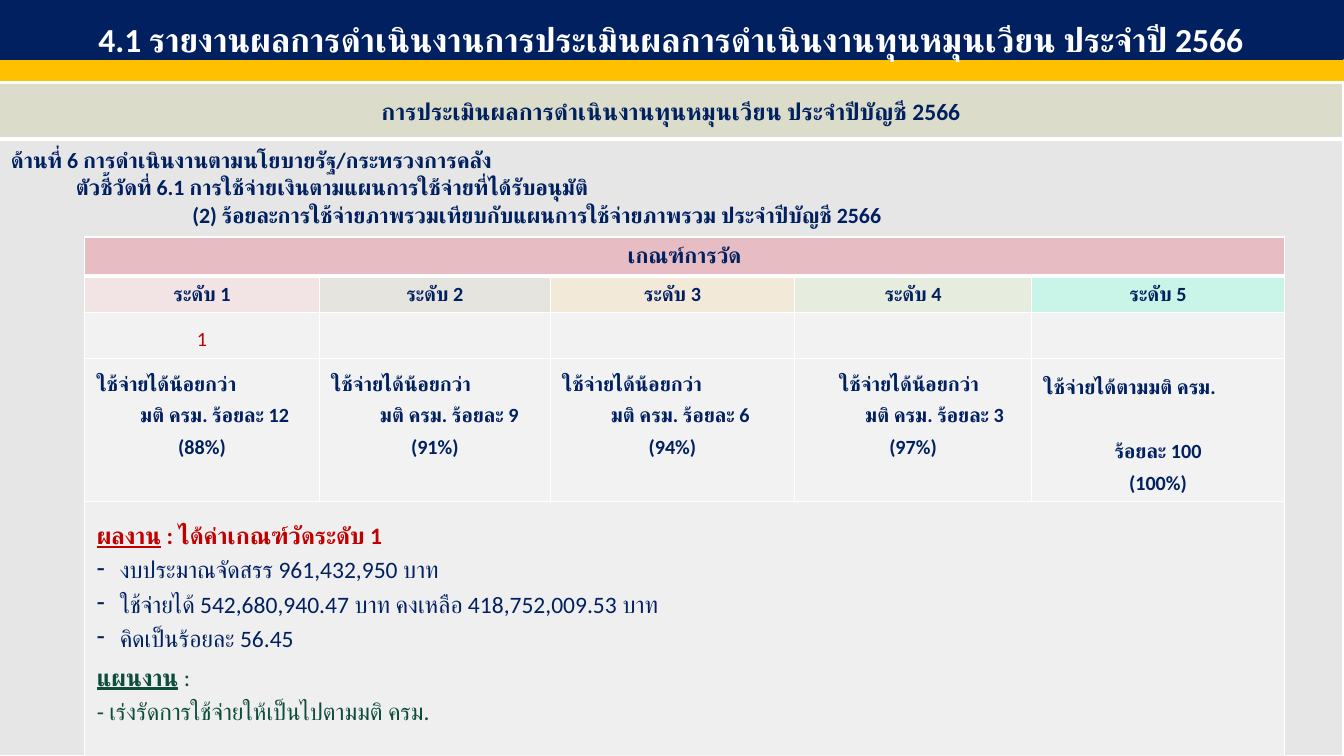
import pptx
import pptx.dml.color
import pptx.enum.shapes
import pptx.enum.text
import pptx.oxml.ns
import pptx.util
from lxml import etree

Pt = pptx.util.Pt
qn = pptx.oxml.ns.qn
ALIGN = pptx.enum.text.PP_ALIGN
ANCHOR = pptx.enum.text.MSO_ANCHOR
NAVY, GOLD, WHITE = "002060", "FFC000", "FFFFFF"
RED, GREEN, PALE = "C00000", "0E4D3C", "F2F2F2"


def rgb(code):
    return pptx.dml.color.RGBColor.from_string(code)


class Deck:
    font = "Calibri"

    def __init__(self, wide, high):
        self.prs = pptx.Presentation()
        self.prs.slide_width, self.prs.slide_height = Pt(wide), Pt(high)
        self.slide = self.prs.slides.add_slide(self.prs.slide_layouts[5])

    def paint(self, shape, fill):
        shape.fill.solid()
        shape.fill.fore_color.rgb = rgb(fill)
        shape.line.color.rgb = rgb(fill)
        shape.line.width = Pt(1)

    def bar(self, x, y, w, h, fill):
        kind = pptx.enum.shapes.MSO_SHAPE.RECTANGLE
        shape = self.slide.shapes.add_shape(kind, Pt(x), Pt(y), Pt(w), Pt(h))
        shape.shadow.inherit = False
        self.paint(shape, fill)

    def title(self, x, y, w, h, text, fill):
        """Format the title placeholder as a band and bring it to the front."""
        shape = self.slide.shapes.title
        shape.left, shape.top, shape.width, shape.height = Pt(x), Pt(y), Pt(w), Pt(h)
        self.paint(shape, fill)
        frame = shape.text_frame
        frame.word_wrap = True
        frame.auto_size = pptx.enum.text.MSO_AUTO_SIZE.NONE
        frame.vertical_anchor = ANCHOR.MIDDLE
        self.para(frame, [text], 20, WHITE, center=True, space=1.5)
        shape._element.getparent().append(shape._element)

    def table(self, x, y, cols, rows):
        frame = self.slide.shapes.add_table(
            len(rows), len(cols), Pt(x), Pt(y), Pt(sum(cols)), Pt(sum(rows)))
        table = frame.table
        table.first_row = table.horz_banding = False
        for col, width in zip(table.columns, cols):
            col.width = Pt(width)
        for row, height in zip(table.rows, rows):
            row.height = Pt(height)
        for r in range(len(rows)):
            for c in range(len(cols)):
                self.border(table.cell(r, c), r)
        return table

    def border(self, cell, row):
        """White cell lines, thick below the heading row."""
        props = cell._tc.get_or_add_tcPr()
        for side in "LRTB":
            thick = (row, side) in ((0, "B"), (1, "T"))
            line = etree.SubElement(props, qn("a:ln" + side), w=str(Pt(3 if thick else 1)))
            fill = etree.SubElement(line, qn("a:solidFill"))
            etree.SubElement(fill, qn("a:srgbClr"), val=WHITE)

    def cell(self, table, row, col, fill, alpha=100, middle=False, pad=3.6):
        """Fill a cell and return its text frame."""
        cell = table.cell(row, col)
        cell.fill.solid()
        cell.fill.fore_color.rgb = rgb(fill)
        if alpha < 100:
            tone = cell._tc.tcPr.find(qn("a:solidFill"))[0]
            etree.SubElement(tone, qn("a:alpha"), val=str(alpha * 1000))
        cell.vertical_anchor = ANCHOR.MIDDLE if middle else ANCHOR.TOP
        cell.margin_top = Pt(pad)
        return cell.text_frame

    def para(self, frame, runs, size, color=NAVY, bold=True, center=False,
             space=1, indent=0, before=0, after=0, dash=False):
        """Add a paragraph; a run is text or (text, bold, underline)."""
        para = frame.paragraphs[0]
        if para.runs:
            para = frame.add_paragraph()
        para.alignment = ALIGN.CENTER if center else ALIGN.LEFT
        para.line_spacing = space
        para.space_before, para.space_after = Pt(before), Pt(after)
        props = para._p.get_or_add_pPr()
        props.set("marL", str(Pt(indent)))
        props.set("indent", str(Pt(-indent if dash else 0)))
        if dash:
            etree.SubElement(props, qn("a:buChar"), char="-")
        for item in runs:
            text, heavy, under = (item, bold, False) if isinstance(item, str) else item
            run = para.add_run()
            run.text = text
            run.font.name, run.font.size = self.font, Pt(size)
            run.font.bold, run.font.underline = heavy, under
            run.font.color.rgb = rgb(color)
            etree.SubElement(run._r.rPr, qn("a:cs"), typeface=self.font)


def main():
    deck = Deck(800, 450)
    deck.bar(0, 36, 800, 11.5, GOLD)

    panel = deck.table(-0.7, 49.7, [800], [33.1, 367])
    head = deck.cell(panel, 0, 0, "DBDCC9", middle=True, pad=5)
    deck.para(head, ["การประเมินผลการดำเนินงานทุนหมุนเวียน ประจำปีบัญชี 2566"], 14, center=True)
    body = deck.cell(panel, 1, 0, "E7E6E6", pad=5)
    for indent, text in (
            (0, "ด้านที่ 6 การดำเนินงานตามนโยบายรัฐ/กระทรวงการคลัง"),
            (38.7, "ตัวชี้วัดที่ 6.1 การใช้จ่ายเงินตามแผนการใช้จ่ายที่ได้รับอนุมัติ"),
            (108, "(2) ร้อยละการใช้จ่ายภาพรวมเทียบกับแผนการใช้จ่ายภาพรวม ประจำปีบัญชี 2566")):
        deck.para(body, [text], 13, indent=indent, after=0.5)

    deck.title(-0.7, -1.4, 800, 36.7,
               "4.1 รายงานผลการดำเนินงานการประเมินผลการดำเนินงานทุนหมุนเวียน ประจำปี 2566", NAVY)

    grid = deck.table(50.4, 141.1, [139.7, 137.5, 145.4, 141.1, 150.5],
                      [22.3, 21.6, 27.4, 83, 154.6])
    for row in (0, 4):
        grid.cell(row, 0).merge(grid.cell(row, 4))
    head = deck.cell(grid, 0, 0, "E8ABB5", 70, middle=True)
    deck.para(head, ["เกณฑ์การวัด"], 13, center=True)

    tints = (("FAE4E5", 60), ("E6E4DF", 100), ("FCEBD1", 60), ("E8F3DA", 60), ("C8F5E8", 100))
    for col, (fill, alpha) in enumerate(tints):
        level = deck.cell(grid, 1, col, fill, alpha, middle=True)
        deck.para(level, [f"ระดับ {col + 1}"], 12, center=True)
        score = deck.cell(grid, 2, col, PALE, middle=True)
        deck.para(score, ["" if col else "1"], 12, RED, bold=False, center=True, space=1.3)

    goals = ((12, 88, 0, 26), (9, 91, 0, 29), (6, 94, 0, 29), (3, 97, 19.5, 35))
    for col, (short, rate, first, second) in enumerate(goals):
        goal = deck.cell(grid, 3, col, PALE)
        deck.para(goal, ["ใช้จ่ายได้น้อยกว่า"], 12, space=1.3, indent=first)
        deck.para(goal, [f"มติ ครม. ร้อยละ {short}"], 12, space=1.3, indent=second)
        deck.para(goal, [f"({rate}%)"], 12, space=1.3, center=True)
    goal = deck.cell(grid, 3, 4, PALE, pad=5.6)
    deck.para(goal, ["ใช้จ่ายได้ตามมติ ครม."], 12, space=1.3, after=19)
    for text in ("ร้อยละ 100", "(100%)"):
        deck.para(goal, [text], 12, space=1.3, center=True)

    result = deck.cell(grid, 4, 0, PALE, 80)
    deck.para(result, [("ผลงาน", True, True), " : ได้ค่าเกณฑ์วัดระดับ 1"], 14, RED, space=1.5)
    for text in ("งบประมาณจัดสรร 961,432,950 บาท",
                 "ใช้จ่ายได้ 542,680,940.47 บาท คงเหลือ 418,752,009.53 บาท",
                 "คิดเป็นร้อยละ 56.45"):
        deck.para(result, [text], 14, bold=False, space=1.2, indent=13.7, dash=True)
    deck.para(result, [("แผนงาน", True, True), " :"], 14, GREEN, bold=False, before=6)
    deck.para(result, ["- เร่งรัดการใช้จ่ายให้เป็นไปตามมติ ครม."], 14, GREEN, bold=False, space=1.2)

    deck.prs.save("out.pptx")


if __name__ == "__main__":
    main()
